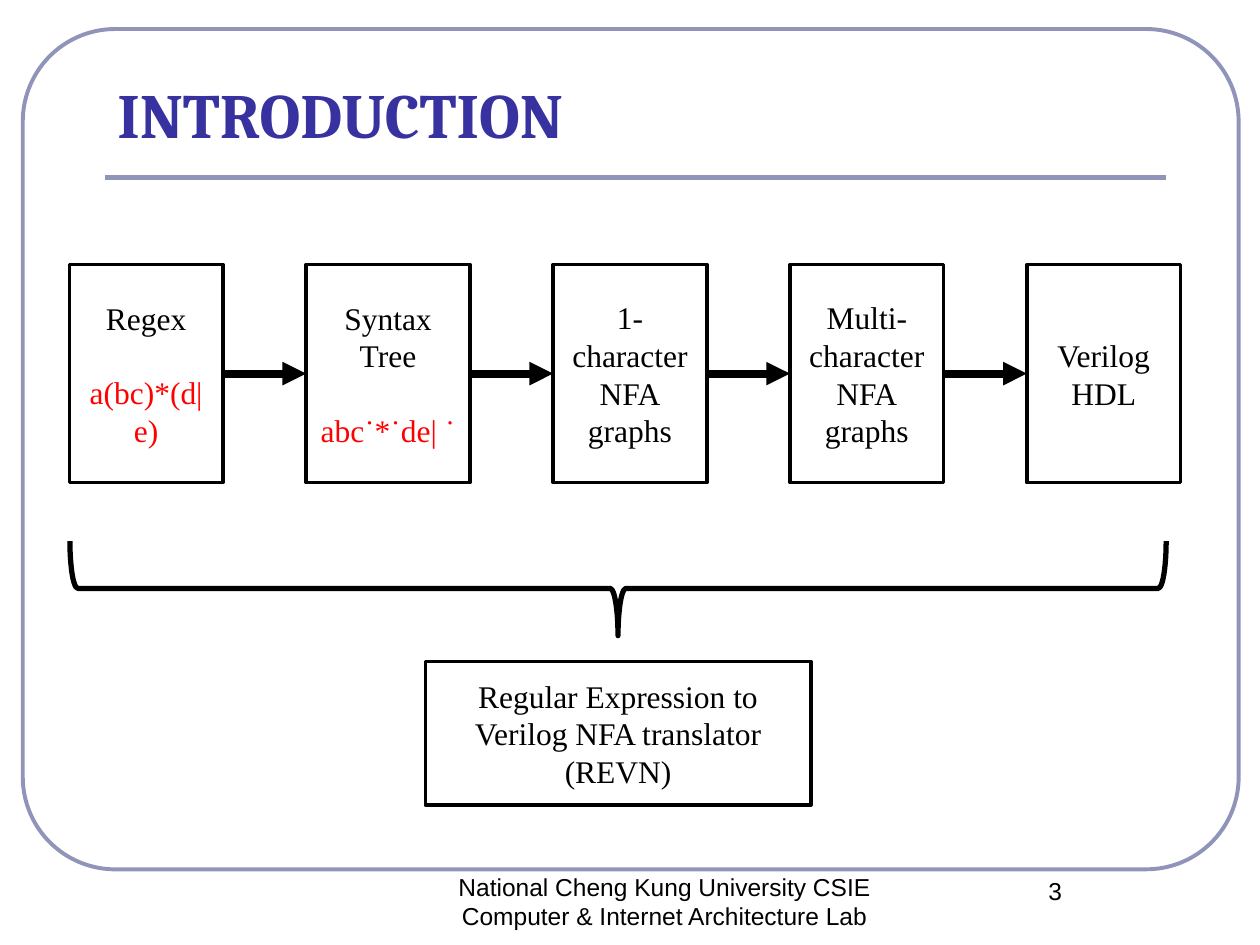
from dataclasses import dataclass

from lxml.etree import SubElement
from pptx import Presentation
from pptx.dml.color import RGBColor
from pptx.enum.shapes import MSO_CONNECTOR as CONN, MSO_SHAPE as SHAPE
from pptx.enum.text import MSO_ANCHOR as ANCHOR, MSO_AUTO_SIZE as AUTO, PP_ALIGN as ALIGN
from pptx.oxml.ns import qn
from pptx.util import Pt


@dataclass(frozen=True)
class Theme:
    ink: RGBColor = RGBColor(0, 0, 0)
    paper: RGBColor = RGBColor(255, 255, 255)
    accent: RGBColor = RGBColor(0x90, 0x94, 0xB8)
    heading: RGBColor = RGBColor(0x37, 0x32, 0xA0)
    example: RGBColor = RGBColor(255, 0, 0)
    title_font: str = "Cambria"
    body_font: str = "Times New Roman"
    footer_font: str = "Arial"
    title_size: float = 36
    body_size: float = 18
    footer_size: float = 14


T = Theme()

# Heading lines and example expression of each stage
STAGES = [
    (["Regex"], "a(bc)*(d|e)"),
    (["Syntax Tree"], "abc˙*˙de| ˙"),
    (["1-character NFA", "graphs"], None),
    (["Multi-character NFA", "graphs"], None),
    (["Verilog", "HDL"], None),
]


def write(p, text, font=T.body_font, size=T.body_size, color=T.ink,
          bold=False, align=ALIGN.CENTER, before=0):
    p.alignment = align
    p.space_before = Pt(before)
    r = p.add_run()
    r.text = text
    r.font.name, r.font.size, r.font.bold = font, Pt(size), bold
    r.font.color.rgb = color


def add_shape(slide, kind, box, color=T.ink, weight=2, fill=None):
    sp = slide.shapes.add_shape(kind, *map(Pt, box))
    sp.shadow.inherit = False
    if fill is None:
        sp.fill.background()
    else:
        sp.fill.solid()
        sp.fill.fore_color.rgb = fill
    sp.line.color.rgb = color
    sp.line.width = Pt(weight)
    return sp


def add_line(slide, start, end, color=T.ink, weight=4.5, arrow=False):
    line = slide.shapes.add_connector(CONN.STRAIGHT, *map(Pt, (*start, *end)))
    line.line.color.rgb = color
    line.line.width = Pt(weight)
    if arrow:
        SubElement(line.line._get_or_add_ln(), qn("a:tailEnd"), type="triangle")
    SubElement(line._element.spPr, qn("a:effectLst"))
    return line


def add_box(slide, box, lines, example=None):
    sp = add_shape(slide, SHAPE.RECTANGLE, box, fill=T.paper)
    tf = sp.text_frame
    tf.word_wrap = True
    tf.vertical_anchor = ANCHOR.MIDDLE
    for i, text in enumerate(lines):
        write(tf.add_paragraph() if i else tf.paragraphs[0], text)
    if example:
        write(tf.add_paragraph(), example, color=T.example, before=21)
    return sp


def add_frame(slide, x, y, w, h):
    # Rounded border and the rule below the title
    border = add_shape(slide, SHAPE.ROUNDED_RECTANGLE, (x, y, w, h), T.accent, 2.25)
    border.adjustments[0] = 0.11
    rule_y = y + 85
    add_line(slide, (x + 46.8, rule_y), (x + w - 41.8, rule_y), T.accent, 3)


def add_title(slide, x, y, w, h):
    sp = slide.shapes.title
    sp.left, sp.top, sp.width, sp.height = map(Pt, (x, y, w, h))
    tf = sp.text_frame
    tf.auto_size = AUTO.NONE
    tf.vertical_anchor = ANCHOR.BOTTOM
    write(tf.paragraphs[0], "INTRODUCTION", font=T.title_font, size=T.title_size,
          color=T.heading, bold=True, align=ALIGN.LEFT)


def add_pipeline(slide, x, y, w, h, wide=93.6, gap=47.5):
    # The second stage is wider; the others share the remaining width
    narrow = (w - wide - gap * (len(STAGES) - 1)) / (len(STAGES) - 1)
    mid = y + h / 2
    for i, (lines, example) in enumerate(STAGES):
        if i:
            add_line(slide, (x - gap, mid), (x, mid), arrow=True)
        width = wide if i == 1 else narrow
        add_box(slide, (x, y, width, h), lines, example)
        x += width + gap


def add_summary(slide, x, y, w, h, brace_h=54, box_w=220.4, box_h=82):
    # A left brace turned to open upwards, with the result under its tip
    cx, cy = x + w / 2, y + brace_h / 2
    brace = add_shape(slide, SHAPE.LEFT_BRACE,
                      (cx - brace_h / 2, cy - w / 2, brace_h, w), weight=3)
    brace.rotation = 270
    add_box(slide, (cx - box_w / 2, y + h - box_h, box_w, box_h),
            ["Regular Expression to Verilog NFA translator (REVN)"])


def add_footer(slide, x, y, w, h, number_w=126):
    parts = [
        ("National Cheng Kung University CSIE Computer & Internet Architecture Lab",
         (x, y, 311.8, h)),
        ("3", (x + w - number_w, y + 2.2, number_w, h)),
    ]
    for text, box in parts:
        tf = slide.shapes.add_textbox(*map(Pt, box)).text_frame
        tf.word_wrap = True
        write(tf.paragraphs[0], text, font=T.footer_font, size=T.footer_size)


def main():
    prs = Presentation()
    prs.slide_width, prs.slide_height = Pt(720), Pt(540)
    slide = prs.slides.add_slide(prs.slide_layouts[5])
    add_frame(slide, 13, 16.6, 694.8, 480.2)
    add_title(slide, 59.8, 43.2, 606.2, 46.8)
    add_pipeline(slide, 39.6, 151.2, 635, 124.6)
    add_summary(slide, 40, 309.2, 626.4, 150.8)
    add_footer(slide, 223.9, 494.6, 442.1, 36)
    prs.save("out.pptx")


if __name__ == "__main__":
    main()
